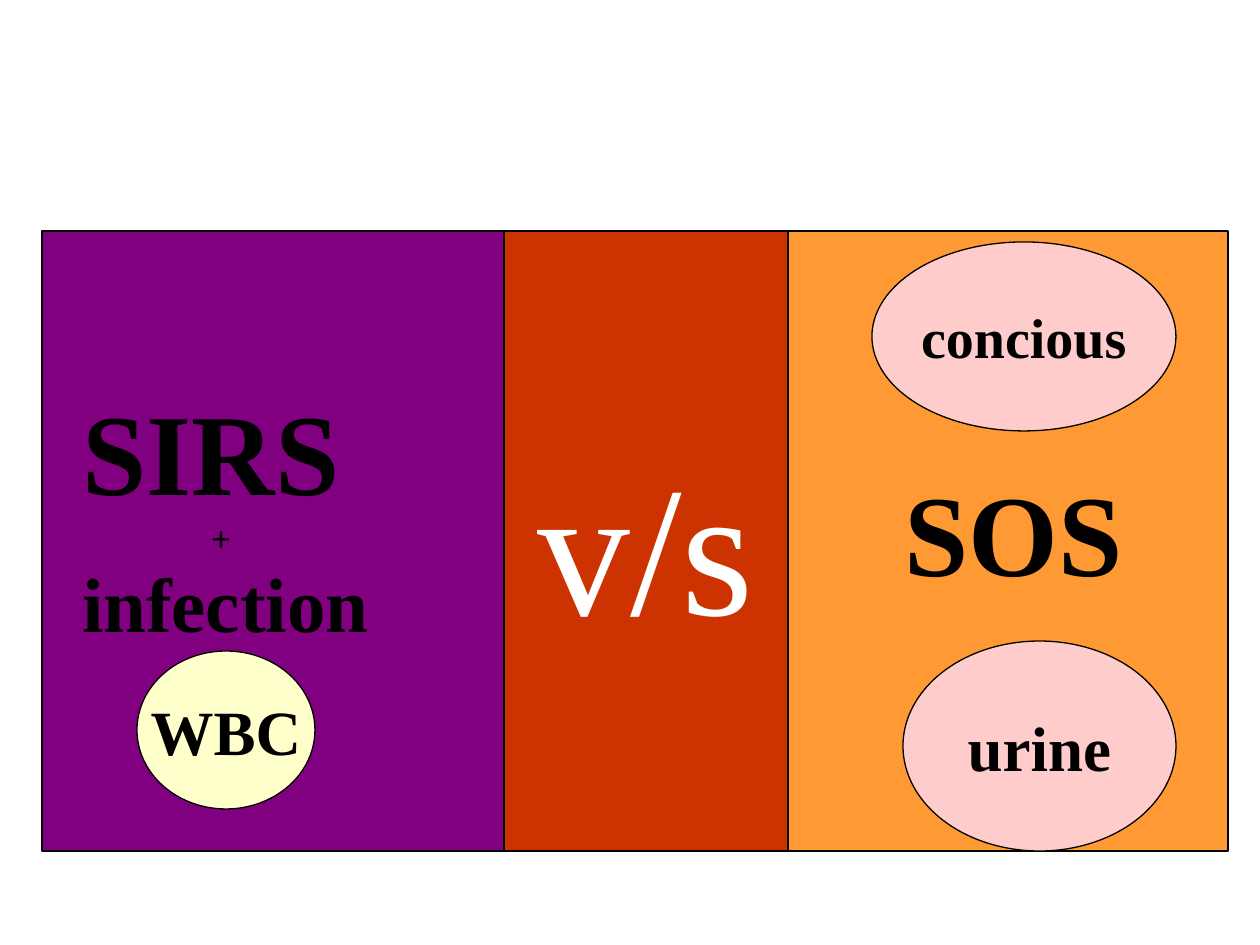
from dataclasses import dataclass

import pptx
import pptx.dml.color
import pptx.enum.shapes
import pptx.enum.text
import pptx.util

RGBColor = pptx.dml.color.RGBColor
MSO_SHAPE = pptx.enum.shapes.MSO_SHAPE

EMU_PER_PX = 914400 / 126
FONT = "Times New Roman"
BLACK = RGBColor(0x00, 0x00, 0x00)
WHITE = RGBColor(0xFF, 0xFF, 0xFF)
ORANGE = RGBColor(0xFF, 0x99, 0x33)
PURPLE = RGBColor(0x80, 0x00, 0x80)
RED = RGBColor(0xCC, 0x33, 0x00)
PINK = RGBColor(0xFF, 0xCC, 0xCC)
CREAM = RGBColor(0xFF, 0xFF, 0xCC)


@dataclass(frozen=True)
class Box:
    left: int
    top: int
    width: int
    height: int

    def emu(self) -> list[pptx.util.Emu]:
        return [px(value) for value in (self.left, self.top, self.width, self.height)]


@dataclass(frozen=True)
class Line:
    text: str
    size: int
    bold: bool = True
    color: RGBColor = BLACK
    space_before: int = 0


@dataclass(frozen=True)
class Figure:
    kind: MSO_SHAPE
    box: Box
    fill: RGBColor
    line: Line | None = None


def px(value: int) -> pptx.util.Emu:
    return pptx.util.Emu(round(value * EMU_PER_PX))


def write(shape, lines: list[Line], line_spacing: float = 1.0) -> None:
    frame = shape.text_frame
    frame.word_wrap = False
    frame.vertical_anchor = pptx.enum.text.MSO_ANCHOR.MIDDLE
    for index, line in enumerate(lines):
        paragraph = frame.paragraphs[0] if index == 0 else frame.add_paragraph()
        paragraph.alignment = pptx.enum.text.PP_ALIGN.CENTER
        paragraph.line_spacing = line_spacing
        paragraph.space_before = pptx.util.Pt(line.space_before)
        run = paragraph.add_run()
        run.text = line.text
        run.font.name = FONT
        run.font.size = pptx.util.Pt(line.size)
        run.font.bold = line.bold
        run.font.color.rgb = line.color


def draw_figure(slide, figure: Figure) -> None:
    shape = slide.shapes.add_shape(figure.kind, *figure.box.emu())
    shape.shadow.inherit = False
    shape.fill.solid()
    shape.fill.fore_color.rgb = figure.fill
    shape.line.color.rgb = BLACK
    shape.line.width = pptx.util.Pt(0.75)
    if figure.line:
        write(shape, [figure.line])


def draw_label(slide, box: Box, lines: list[Line], line_spacing: float = 1.0,
               bottom_inset: int = 6) -> None:
    shape = slide.shapes.add_textbox(*box.emu())
    shape.text_frame.margin_bottom = px(bottom_inset)
    write(shape, lines, line_spacing)


PANEL_TOP, PANEL_HEIGHT = 231, 620

BACK_FIGURES = [
    Figure(MSO_SHAPE.RECTANGLE, Box(514, PANEL_TOP, 714, PANEL_HEIGHT), ORANGE),
    Figure(MSO_SHAPE.RECTANGLE, Box(42, PANEL_TOP, 599, PANEL_HEIGHT), PURPLE),
    Figure(MSO_SHAPE.OVAL, Box(872, 242, 304, 189), PINK, Line("concious", 32)),
    Figure(MSO_SHAPE.OVAL, Box(903, 641, 273, 210), PINK, Line("urine", 36)),
]
WBC = Figure(MSO_SHAPE.OVAL, Box(137, 651, 178, 158), CREAM, Line("WBC", 36))
VERSUS = Figure(MSO_SHAPE.RECTANGLE, Box(504, PANEL_TOP, 284, PANEL_HEIGHT), RED,
                Line("v/s", 106, bold=False, color=WHITE))
SIRS_LINES = [
    Line("SIRS ", 66),
    Line("+ ", 20, space_before=4),
    Line("infection", 44, space_before=9),
]


def main() -> None:
    presentation = pptx.Presentation()
    presentation.slide_width = px(1260)
    presentation.slide_height = px(945)
    slide = presentation.slides.add_slide(presentation.slide_layouts[6])

    # Side panels and the pink ovals
    for figure in BACK_FIGURES:
        draw_figure(slide, figure)

    # Left side
    draw_label(slide, Box(63, 347, 325, 399), SIRS_LINES, line_spacing=0.8, bottom_inset=45)
    draw_figure(slide, WBC)

    # Right side
    draw_label(slide, Box(840, 441, 347, 179), [Line("SOS", 66)])

    # Middle panel
    draw_figure(slide, VERSUS)

    presentation.save("out.pptx")


if __name__ == "__main__":
    main()
